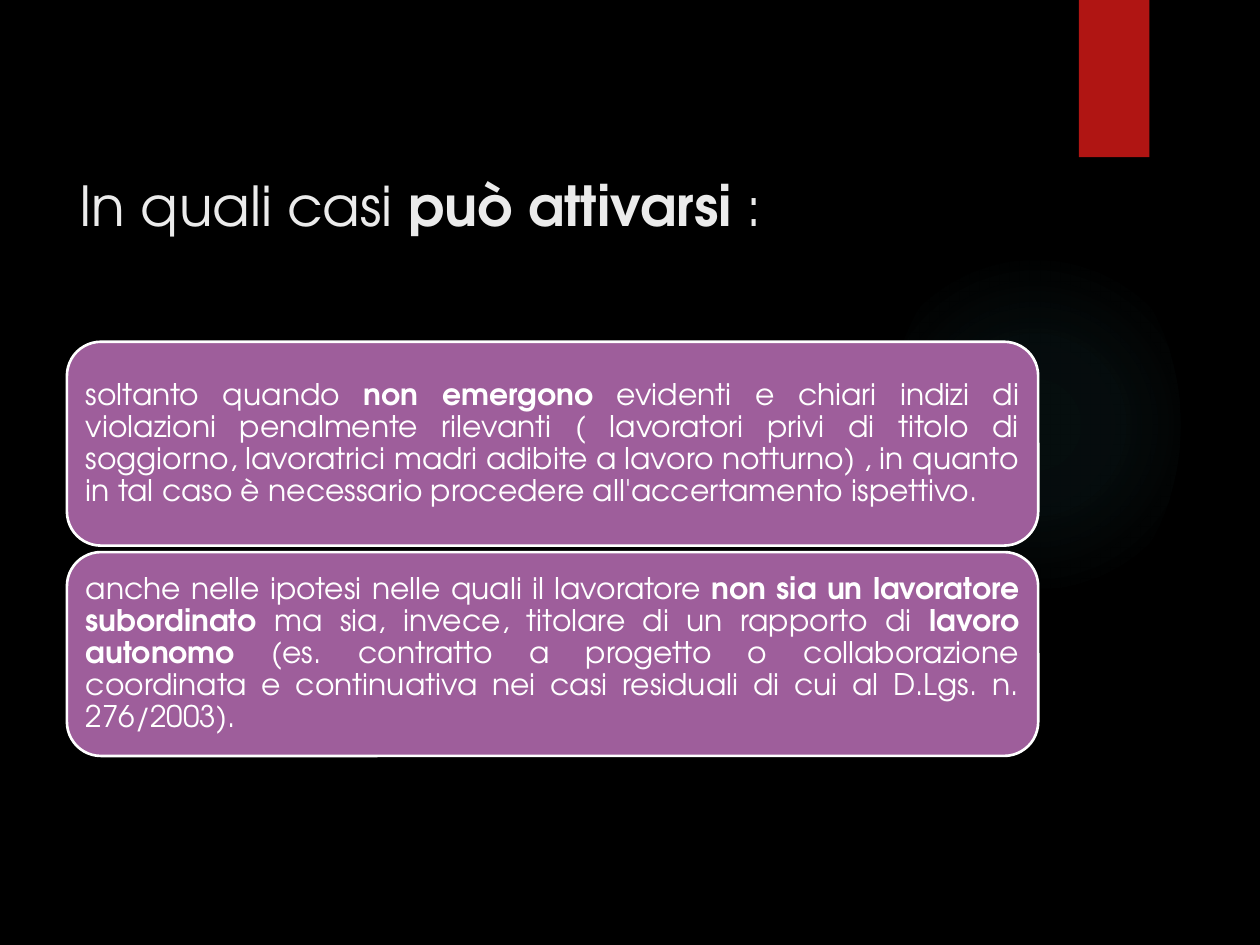
from lxml import etree
from pptx import Presentation
from pptx.dml.color import RGBColor
from pptx.enum import shapes, text
from pptx.oxml import ns
from pptx.util import Cm, Pt

# Content: each run is (words, bold)
TITLE = [("In quali casi ", False), ("può attivarsi ", True), (":", False)]
CASES = [
    [("soltanto quando ", False),
     ("non emergono ", True),
     ("evidenti e chiari indizi di violazioni penalmente rilevanti ( lavoratori "
      "privi di titolo di soggiorno, lavoratrici madri adibite a lavoro notturno) , "
      "in quanto in tal caso è necessario procedere all'accertamento ispettivo.", False)],
    [("anche nelle ipotesi nelle quali il lavoratore ", False),
     ("non sia un lavoratore subordinato ", True),
     ("ma sia, invece, titolare di un rapporto di ", False),
     ("lavoro autonomo ", True),
     ("(es. contratto a progetto o collaborazione coordinata e continuativa nei casi "
      "residuali di cui al D.Lgs. n. 276/2003).", False)],
]

FONT = "TeX Gyre Adventor"
COLORS = {"background": "000000", "glow": "50B9C1", "ribbon": "B01513",
          "title": "EBEBEB", "card": "9E5E9B", "card_text": "FFFFFF"}
GLOW_STOPS = [(0, 7), (36, 6), (69, 0)]  # position %, opacity %

# Layout in centimetres
LEFT, WIDTH = 1.35, 19.58
CARD_TOP, CARD_HEIGHT, CARD_GAP = 6.89, 4.11, 0.13
CARD_INSET = 0.18  # added to the inset of the rounded corners


def color(part):
    return RGBColor.from_string(COLORS[part])


def add_runs(paragraph, runs, size, part):
    for words, bold in runs:
        run = paragraph.add_run()
        run.text = words
        run.font.name, run.font.size, run.font.bold = FONT, Pt(size), bold
        run.font.color.rgb = color(part)


def add_block(slide, preset, left, top, width, height, part):
    block = slide.shapes.add_shape(preset, Cm(left), Cm(top), Cm(width), Cm(height))
    block.shadow.inherit = False
    block.fill.solid()
    block.fill.fore_color.rgb = color(part)
    block.line.fill.background()
    return block


def fade_radially(block, part):
    solid = block._element.spPr.find(ns.qn("a:solidFill"))
    gradient = etree.Element(ns.qn("a:gradFill"))
    stops = etree.SubElement(gradient, ns.qn("a:gsLst"))
    for position, opacity in GLOW_STOPS:
        stop = etree.SubElement(stops, ns.qn("a:gs"), pos=str(position * 1000))
        tint = etree.SubElement(stop, ns.qn("a:srgbClr"), val=COLORS[part])
        etree.SubElement(tint, ns.qn("a:alpha"), val=str(opacity * 1000))
    circle = etree.SubElement(gradient, ns.qn("a:path"), path="circle")
    etree.SubElement(circle, ns.qn("a:fillToRect"), l="50000", t="50000", r="50000", b="50000")
    solid.getparent().replace(solid, gradient)


def add_card(slide, top, runs):
    card = add_block(slide, shapes.MSO_SHAPE.ROUNDED_RECTANGLE,
                     LEFT, top, WIDTH, CARD_HEIGHT, "card")
    card.line.color.rgb = color("card_text")
    card.line.width = Pt(1.5)
    frame = card.text_frame
    frame.word_wrap = True
    frame.vertical_anchor = text.MSO_ANCHOR.MIDDLE
    frame.margin_left = frame.margin_right = Cm(CARD_INSET)
    frame.margin_top = frame.margin_bottom = Cm(CARD_INSET)
    paragraph = frame.paragraphs[0]
    paragraph.alignment = text.PP_ALIGN.JUSTIFY
    paragraph.line_spacing = 0.9
    add_runs(paragraph, runs, 17, "card_text")


def main():
    deck = Presentation()
    deck.slide_width, deck.slide_height = Cm(25.4), Cm(19.05)
    slide = deck.slides.add_slide(deck.slide_layouts[5])
    slide.background.fill.solid()
    slide.background.fill.fore_color.rgb = color("background")

    # Backdrop: soft glow and ribbon
    glow = add_block(slide, shapes.MSO_SHAPE.OVAL, 17.93, 4.65, 5.87, 7.82, "glow")
    fade_radially(glow, "glow")
    add_block(slide, shapes.MSO_SHAPE.RECTANGLE, 21.75, 0, 1.42, 3.17, "ribbon")

    # Title
    title = slide.shapes.title
    title.left, title.top, title.width, title.height = Cm(LEFT), Cm(3.33), Cm(WIDTH), Cm(2.92)
    frame = title.text_frame
    frame.auto_size = text.MSO_AUTO_SIZE.NONE
    frame.vertical_anchor = text.MSO_ANCHOR.TOP
    frame.paragraphs[0].alignment = text.PP_ALIGN.LEFT
    add_runs(frame.paragraphs[0], TITLE, 31.5, "title")

    # One card per case
    for row, runs in enumerate(CASES):
        add_card(slide, CARD_TOP + row * (CARD_HEIGHT + CARD_GAP), runs)

    deck.save("out.pptx")


if __name__ == "__main__":
    main()
